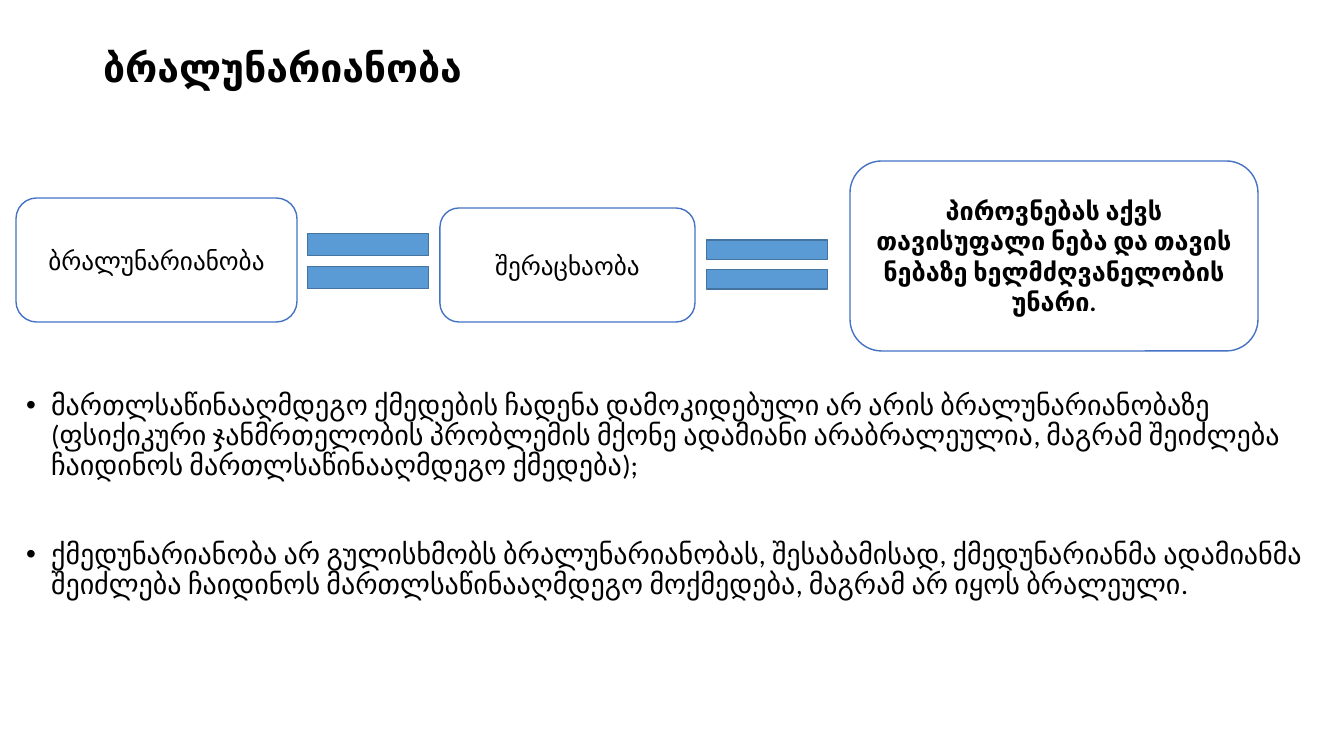
import pptx
import pptx.util
import pptx.dml.color
import pptx.enum.shapes
import pptx.enum.text
import pptx.oxml.ns
import lxml.etree

PX = 914400 / 100.8
FONT = "Calibri"
COLORS = {"text": "000000", "paper": "FFFFFF", "outline": "4472C4",
          "equals": "5B9BD5", "equals_line": "43739E"}
ALIGN = pptx.enum.text.PP_ALIGN
ANCHOR = pptx.enum.text.MSO_ANCHOR
SHAPE = pptx.enum.shapes.MSO_SHAPE

TITLE = "ბრალუნარიანობა"
POINTS = [
    "მართლსაწინააღმდეგო ქმედების ჩადენა დამოკიდებული არ არის ბრალუნარიანობაზე "
    "(ფსიქიკური ჯანმრთელობის პრობლემის მქონე ადამიანი არაბრალეულია, მაგრამ შეიძლება "
    "ჩაიდინოს მართლსაწინააღმდეგო ქმედება);",
    "ქმედუნარიანობა არ გულისხმობს ბრალუნარიანობას, შესაბამისად, ქმედუნარიანმა ადამიანმა "
    "შეიძლება ჩაიდინოს მართლსაწინააღმდეგო მოქმედება, მაგრამ არ იყოს ბრალეული.",
]
# Terms of the equation: text, bold, (left, top, width, height)
TERMS = [
    ("ბრალუნარიანობა", False, (0, 37, 281, 124)),
    ("შერაცხაობა", False, (424, 47, 255, 114)),
    ("პიროვნებას აქვს თავისუფალი ნება და თავის ნებაზე ხელმძღვანელობის უნარი.",
     True, (834, 0, 408, 190)),
]
EQUALS_SIGNS = [(270, 53, 164, 94), (669, 62, 164, 83)]


def emu(pixels):
    return pptx.util.Emu(round(pixels * PX))


def rgb(name):
    return pptx.dml.color.RGBColor.from_string(COLORS[name])


def write(para, text, size=18, bold=False, align=ALIGN.LEFT, spacing=1.0, before=0):
    para.alignment = align
    para.line_spacing = spacing
    para.space_before = pptx.util.Pt(before)
    span = para.add_run()
    span.text = text
    span.font.name = FONT
    span.font.size = pptx.util.Pt(size)
    span.font.bold = bold
    span.font.color.rgb = rgb("text")


def place(shape, box):
    shape.left, shape.top, shape.width, shape.height = map(emu, box)


def add_bullet(para, indent):
    properties = para._p.get_or_add_pPr()
    properties.set("marL", str(emu(indent)))
    properties.set("indent", str(-emu(indent)))
    bullet = lxml.etree.SubElement(properties, pptx.oxml.ns.qn("a:buChar"))
    bullet.set("char", "•")


def add_figure(page, kind, box, fill, line):
    figure = page.shapes.add_shape(kind, *map(emu, box))
    figure.shadow.inherit = False
    figure.fill.solid()
    figure.fill.fore_color.rgb = rgb(fill)
    figure.line.color.rgb = rgb(line)
    figure.line.width = pptx.util.Pt(1)
    return figure


def fill_title(page, box):
    title = page.shapes.title
    place(title, box)
    frame = title.text_frame
    frame.auto_size = pptx.enum.text.MSO_AUTO_SIZE.NONE
    frame.vertical_anchor = ANCHOR.MIDDLE
    write(frame.paragraphs[0], TITLE, size=28, bold=True, spacing=0.9)


def fill_points(page, box, inset):
    body = page.placeholders[1]
    place(body, box)
    frame = body.text_frame
    frame.auto_size = pptx.enum.text.MSO_AUTO_SIZE.NONE
    frame.vertical_anchor = ANCHOR.TOP
    frame.margin_top = emu(inset)
    for index, text in enumerate(POINTS):
        para = frame.add_paragraph() if index else frame.paragraphs[0]
        write(para, text, size=20, spacing=0.9, before=42 * index)
        add_bullet(para, 25)


def draw_equation(page, left, top):
    def shifted(box):
        return (left + box[0], top + box[1], *box[2:])

    for text, bold, box in TERMS:
        term = add_figure(page, SHAPE.ROUNDED_RECTANGLE, shifted(box), "paper", "outline")
        frame = term.text_frame
        frame.word_wrap = True
        frame.vertical_anchor = ANCHOR.MIDDLE
        write(frame.paragraphs[0], text, bold=bold, align=ALIGN.CENTER)
    for box in EQUALS_SIGNS:
        add_figure(page, SHAPE.MATH_EQUAL, shifted(box), "equals", "equals_line")


def main():
    deck = pptx.Presentation()
    deck.slide_width, deck.slide_height = emu(1344), emu(756)
    page = deck.slides.add_slide(deck.slide_layouts[1])
    # Heading
    fill_title(page, (93, 40, 1159, 60))
    # Bulleted list, starting below the equation
    fill_points(page, (16, 101, 1313, 581), inset=290)
    # Three terms joined by equals signs
    draw_equation(page, 16, 161)
    deck.save("out.pptx")


if __name__ == "__main__":
    main()
